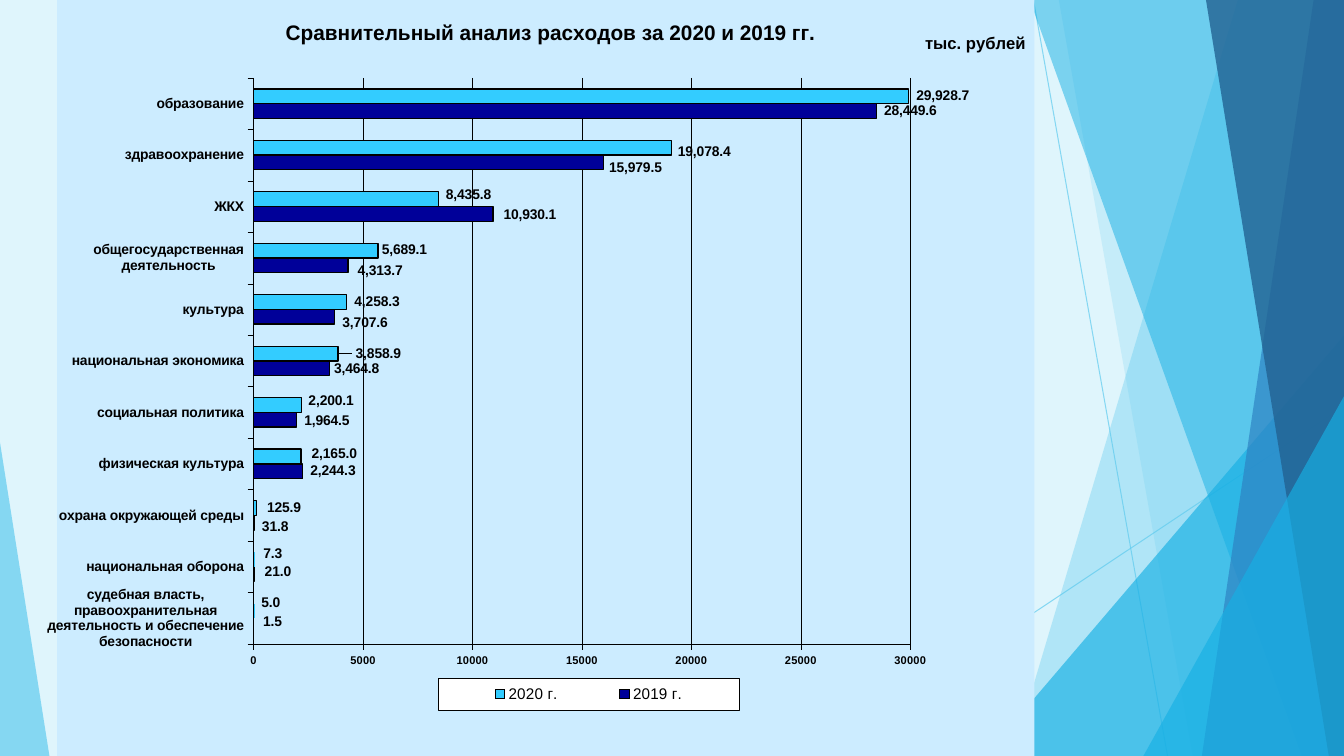
import pptx
import pptx.chart.data
import pptx.dml.color
import pptx.enum.chart
import pptx.enum.shapes
import pptx.oxml
import pptx.oxml.ns
import pptx.util
from pptx.util import Inches

SHAPE = pptx.enum.shapes.MSO_SHAPE
XL = pptx.enum.chart
NS = pptx.oxml.ns.nsdecls("c", "a")
W, H = 13.33, 7.5
CHART_BOX = (0.47, 0, 9.79, 7.5)
LABEL_FORMAT = '_(* #,##0.0_);_(* \\(#,##0.0\\);_(* "-"??_'

EXPENSES = [
    ("cудебная власть, правоохранительная деятельность и обеспечение безопасности", 1.5, 5),
    ("национальная оборона", 21, 7.3),
    ("охрана окружающей среды", 31.8, 125.9),
    ("физическая культура", 2244.3, 2165),
    ("социальная политика", 1964.5, 2200.1),
    ("национальная экономика", 3464.8, 3858.9),
    ("культура", 3707.6, 4258.3),
    ("общегосударственная деятельность", 4313.7, 5689.1),
    ("ЖКХ", 10930.1, 8435.8),
    ("здравоохранение", 15979.5, 19078.4),
    ("образование", 28449.6, 29928.7),
]
LABEL_SHIFTS = {
    "2019 г.": [(0.02, -0.04), (0.03, -0.02), (0, 0.04), (0, 0), (0, 0.01), (-0.03, 0.01),
                (0, 0.06), (0.02, 0.05), (0.03, 0.01), (-0.02, 0.05), (0, 0)],
    "2020 г.": [(0, -0.08), (0.02, -0.06), (0.03, 0), (0.03, -0.03), (-0.01, -0.04), (0.1, 0),
                (0, 0), (-0.04, -0.01), (0, -0.04), (-0.01, 0.04), (0, 0)],
}
SERIES_COLORS = {"2019 г.": "000099", "2020 г.": "33CCFF"}


def rgb(color):
    return pptx.dml.color.RGBColor.from_string(color)


def xml(text):
    return pptx.oxml.parse_xml(text)


def set_alpha(fill, percent):
    for clr in fill._xPr.iter(pptx.oxml.ns.qn("a:srgbClr")):
        clr.append(xml(f'<a:alpha {NS} val="{percent * 1000}"/>'))


def set_layout(parent, index, x, y, w=None, h=None, edge=True, inner=False):
    for old in parent.findall(pptx.oxml.ns.qn("c:layout")):
        parent.remove(old)
    parts = '<c:layoutTarget val="inner"/>' if inner else ""
    if edge:
        parts += '<c:xMode val="edge"/><c:yMode val="edge"/>'
    for tag, value in zip("xywh", (x, y, w, h)):
        if value is not None:
            parts += f'<c:{tag} val="{value:.4f}"/>'
    parent.insert(index, xml(f"<c:layout {NS}><c:manualLayout>{parts}</c:manualLayout></c:layout>"))


def box_style(fill, line=None):
    border = f'<a:solidFill><a:srgbClr val="{line}"/></a:solidFill>' if line else "<a:noFill/>"
    return xml(f'<c:spPr {NS}><a:solidFill><a:srgbClr val="{fill}"/></a:solidFill>'
               f'<a:ln w="3175">{border}</a:ln></c:spPr>')


class Deck:
    font = "Arial"
    ink = "000000"
    panel = "CCECFF"

    def __init__(self):
        self.prs = pptx.Presentation()
        self.prs.slide_width, self.prs.slide_height = Inches(W), Inches(H)
        self.s = self.prs.slides.add_slide(self.prs.slide_layouts[6])
        fill = self.s.background.fill
        fill.solid()
        fill.fore_color.rgb = rgb("DFF5FC")

    def paint(self, sp, color, alpha):
        sp.shadow.inherit = False
        sp.fill.solid()
        sp.fill.fore_color.rgb = rgb(color)
        set_alpha(sp.fill, alpha)
        sp.line.fill.background()

    def line(self, x1, y1, x2, y2):
        c = self.s.shapes.add_connector(pptx.enum.shapes.MSO_CONNECTOR.STRAIGHT,
                                        Inches(x1), Inches(y1), Inches(x2), Inches(y2))
        c.line.width = pptx.util.Pt(0.75)
        c.line.color.rgb = rgb("5FCBEF")
        set_alpha(c.line.fill, 70)
        c._element.spPr.append(xml(f"<a:effectLst {NS}/>"))

    def shard(self, top_x, bottom_x, color, alpha):
        points = [(Inches(x), Inches(y)) for x, y in
                  ((top_x, -0.01), (W, -0.01), (W, H), (bottom_x, H))]
        fb = self.s.shapes.build_freeform(*points[0], scale=1.0)
        fb.add_line_segments(points[1:], close=True)
        self.paint(fb.convert_to_shape(), color, alpha)

    def triangle(self, x, y, w, h, apex, color, alpha):
        sp = self.s.shapes.add_shape(SHAPE.ISOSCELES_TRIANGLE,
                                     Inches(x), Inches(y), Inches(w), Inches(h))
        sp.adjustments[0] = apex
        self.paint(sp, color, alpha)

    def style_font(self, font, size, bold=True):
        font.name, font.size, font.bold = self.font, pptx.util.Pt(size), bold
        font.color.rgb = rgb(self.ink)

    def style_line(self, line, width=0.25):
        line.color.rgb = rgb(self.ink)
        line.width = pptx.util.Pt(width)

    def chart_text(self, title, text, size, x, y):
        r = title.text_frame.paragraphs[0].add_run()
        r.text = text
        self.style_font(r.font, size)
        set_layout(title._element, 1, x, y)

    def axis(self, axis, size):
        axis.major_tick_mark = XL.XL_TICK_MARK.OUTSIDE
        axis.minor_tick_mark = XL.XL_TICK_MARK.NONE
        self.style_font(axis.tick_labels.font, size)
        self.style_line(axis.format.line)

    def labels(self, series, shifts):
        dls = series.data_labels
        dls.show_value = True
        dls.number_format, dls.number_format_is_linked = LABEL_FORMAT, False
        dls.position = XL.XL_LABEL_POSITION.OUTSIDE_END
        self.style_font(dls.font, 10)
        for i, (dx, dy) in enumerate(shifts):
            if (dx, dy) == (0, 0):
                continue
            dl = series.points[i].data_label
            dl.position = XL.XL_LABEL_POSITION.OUTSIDE_END
            self.style_font(dl.font, 10)
            el = series._element.xpath(f"c:dLbls/c:dLbl[c:idx/@val={i}]")[0]
            set_layout(el, 1, dx / CHART_BOX[2], dy / CHART_BOX[3], edge=False)
            num = xml(f'<c:numFmt {NS} sourceLinked="0"/>')
            num.set("formatCode", LABEL_FORMAT)
            el.insert(2, num)

    def expense_chart(self):
        data = pptx.chart.data.CategoryChartData()
        data.categories = [row[0] for row in EXPENSES]
        for column, name in enumerate(SERIES_COLORS, 1):
            data.add_series(name, [row[column] for row in EXPENSES])
        chart = self.s.shapes.add_chart(XL.XL_CHART_TYPE.BAR_CLUSTERED,
                                        *map(Inches, CHART_BOX), data).chart
        self.style_font(chart.font, 12, False)
        plot = chart.plots[0]
        plot.gap_width, plot.overlap, plot.vary_by_categories = 150, 0, False
        for series in plot.series:
            series.invert_if_negative = False
            series.format.fill.solid()
            series.format.fill.fore_color.rgb = rgb(SERIES_COLORS[series.name])
            self.style_line(series.format.line, 1)
            self.labels(series, LABEL_SHIFTS[series.name])

        cat, val = chart.category_axis, chart.value_axis
        self.axis(cat, 10)
        self.axis(val, 8)
        val.minimum_scale, val.maximum_scale, val.major_unit = 0, 30000, 5000
        val.tick_labels.number_format = "General"
        val.tick_labels.number_format_is_linked = False
        self.style_line(val.major_gridlines.format.line)
        chart.has_title = True
        self.chart_text(chart.chart_title, "Сравнительный анализ расходов за 2020 и 2019 гг.",
                        15, 0.23, 0.02)
        self.chart_text(val.axis_title, "тыс. рублей", 12, 0.885, 0.04)

        chart.has_legend = True
        legend = chart.legend
        legend.position = XL.XL_LEGEND_POSITION.RIGHT
        legend.include_in_layout = False
        self.style_font(legend.font, 11, False)
        set_layout(legend._element, 1, 0.39, 0.897, 0.308, 0.042)
        legend._element.xpath("c:overlay")[0].addnext(box_style("FFFFFF", self.ink))
        area = chart.element.xpath("c:chart/c:plotArea")[0]
        set_layout(area, 0, 0.201, 0.103, 0.672, 0.749, inner=True)
        area.append(box_style(self.panel))
        chart.element.xpath("c:chart")[0].addnext(box_style(self.panel))


def main():
    deck = Deck()
    deck.line(10.25, 0, 11.58, H)
    deck.line(W, 4.03, 8.12, H)
    deck.shard(12.28, 10.04, "5FCBEF", 36)
    deck.shard(10.5, 11.83, "5FCBEF", 20)
    deck.triangle(9.77, 3.33, 3.56, 4.17, 1, "17B0E4", 66)
    deck.shard(10.21, 12.91, "17B0E4", 50)
    deck.shard(13.03, 11.92, "2E83C3", 70)
    deck.shard(11.96, 13.18, "226292", 80)
    deck.triangle(11.34, 3.93, 1.99, 3.57, 1, "17B0E4", 66)
    deck.triangle(0, 4.39, 0.49, 3.11, 0, "5FCBEF", 70)
    deck.expense_chart()
    deck.prs.save("out.pptx")


if __name__ == "__main__":
    main()
